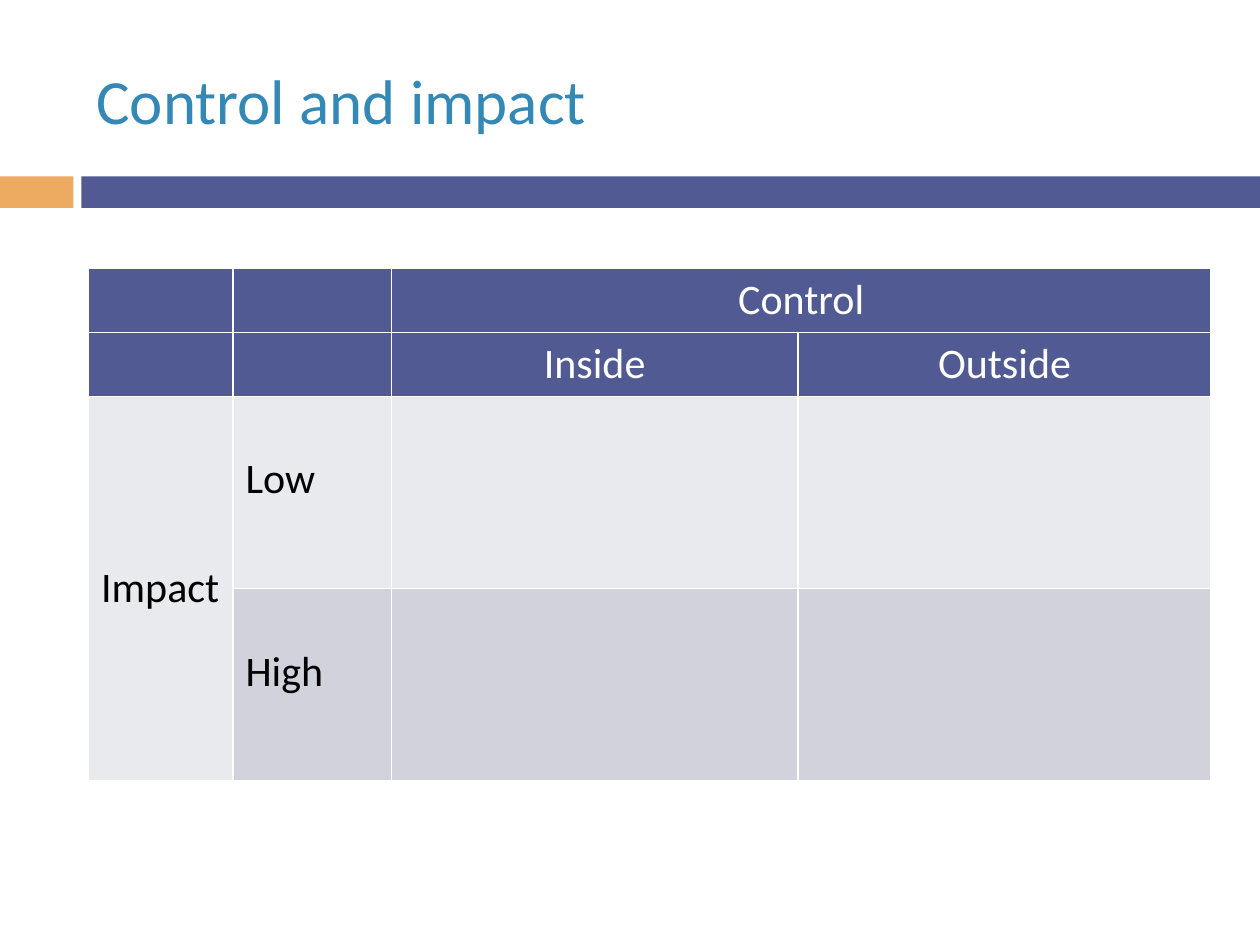
"""Build the control and impact matrix slide."""
import pptx
import pptx.dml.color
import pptx.enum.shapes
import pptx.enum.text
import pptx.oxml.ns
import pptx.util
from lxml import etree

Pt = pptx.util.Pt
ALIGN = pptx.enum.text.PP_ALIGN
ANCHOR = pptx.enum.text.MSO_ANCHOR
INDIGO, ORANGE, BLUE = "525A93", "EDAA61", "3488B6"
WHITE, BLACK, LIGHT, DARK = "FFFFFF", "000000", "E9EAEE", "D1D2DC"


def paint(target, color):
    target.solid()
    target.fore_color.rgb = pptx.dml.color.RGBColor.from_string(color)


def write(para, text, size, color, align=ALIGN.LEFT):
    para.alignment = align
    span = para.add_run()
    span.text = text
    for name, value in {"name": "Calibri", "size": Pt(size)}.items():
        setattr(span.font, name, value)
    paint(span.font.fill, color)


deck = pptx.Presentation()
deck.slide_width, deck.slide_height = Pt(720), Pt(540)
page = deck.slides.add_slide(deck.slide_layouts[6])

for left, width, color in [(0, 42, ORANGE), (46.5, 673.5, INDIGO)]:
    bar = page.shapes.add_shape(
        pptx.enum.shapes.MSO_SHAPE.RECTANGLE, Pt(left), Pt(100.8), Pt(width), Pt(18))
    bar.shadow.inherit = False
    paint(bar.fill, color)
    bar.line.fill.background()

title = page.shapes.add_textbox(Pt(48), Pt(18), Pt(642), Pt(78))
frame_format = {"word_wrap": True, "vertical_anchor": ANCHOR.MIDDLE}
for name, value in frame_format.items():
    setattr(title.text_frame, name, value)
write(title.text_frame.paragraphs[0], "Control and impact", 36, BLUE)

widths = [82.5, 90.5, 232.5, 236]
heights = [36.6, 36.6, 109.8, 109.8]
matrix = page.shapes.add_table(
    4, 4, Pt(50.6), Pt(153.4), Pt(sum(widths)), Pt(sum(heights))).table
for column, width in zip(matrix.columns, widths):
    column.width = Pt(width)
for row, height in zip(matrix.rows, heights):
    row.height = Pt(height)

row_fills = [INDIGO, INDIGO, LIGHT, DARK]
for row, color in zip(matrix.rows, row_fills):
    for cell in row.cells:
        properties = cell._tc.get_or_add_tcPr()
        for edge in ("lnL", "lnR", "lnT", "lnB"):
            line = etree.SubElement(
                properties, pptx.oxml.ns.qn(f"a:{edge}"), w=str(Pt(1)))
            fill = etree.SubElement(line, pptx.oxml.ns.qn("a:solidFill"))
            etree.SubElement(fill, pptx.oxml.ns.qn("a:srgbClr"), val=WHITE)
        paint(cell.fill, color)

matrix.cell(0, 2).merge(matrix.cell(0, 3))
matrix.cell(2, 0).merge(matrix.cell(3, 0))

header = {"vertical_anchor": ANCHOR.TOP}
group = {"vertical_anchor": ANCHOR.MIDDLE}
level = {"vertical_anchor": ANCHOR.TOP, "margin_top": Pt(32.9)}
labels = [
    (0, 2, "Control", WHITE, ALIGN.CENTER, header),
    (1, 2, "Inside", WHITE, ALIGN.CENTER, header),
    (1, 3, "Outside", WHITE, ALIGN.CENTER, header),
    (2, 0, "Impact", BLACK, ALIGN.LEFT, group),
    (2, 1, "Low", BLACK, ALIGN.LEFT, level),
    (3, 1, "High", BLACK, ALIGN.LEFT, level),
]
for row, column, text, color, align, cell_format in labels:
    cell = matrix.cell(row, column)
    for name, value in cell_format.items():
        setattr(cell, name, value)
    write(cell.text_frame.paragraphs[0], text, 24, color, align)

deck.save("out.pptx")
